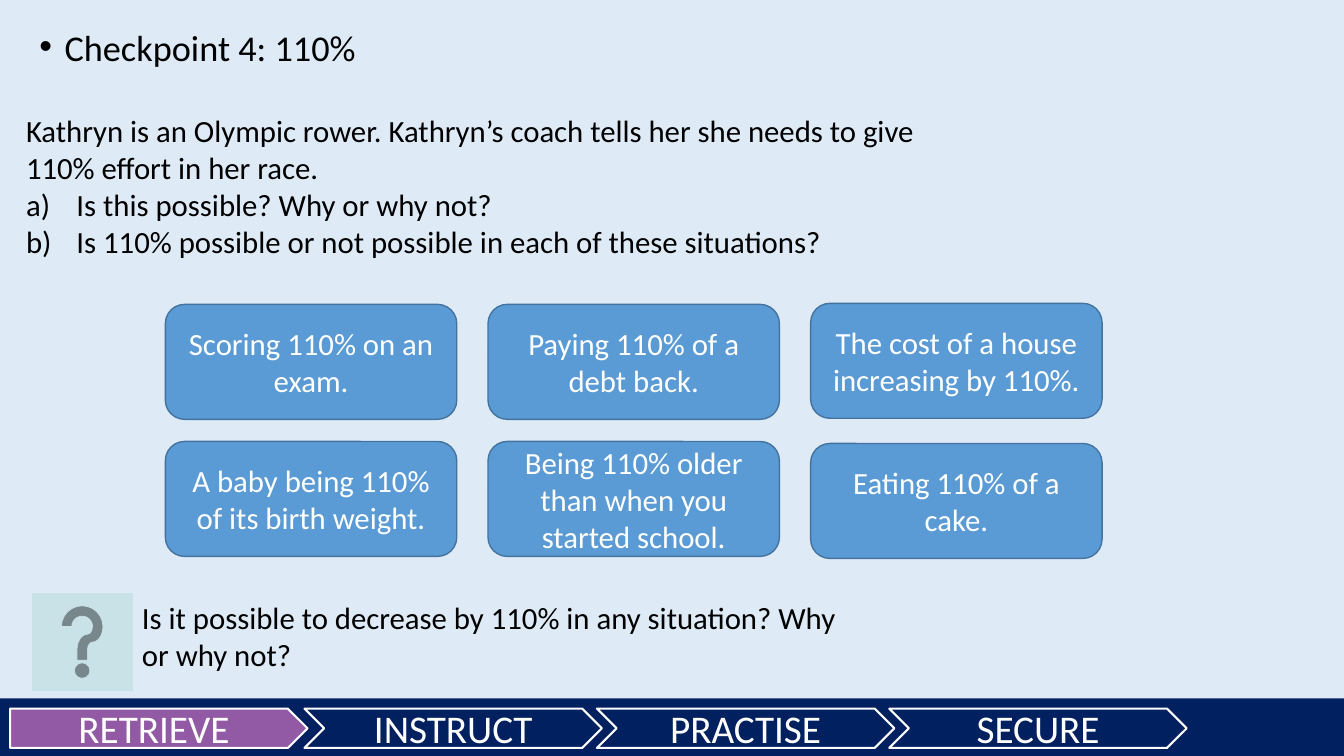
from pptx import Presentation
from pptx import util as u
from pptx.dml.color import RGBColor
from pptx.enum import shapes, text
from pptx.oxml.ns import qn
from lxml import etree

PALE_BLUE = RGBColor(0xDE, 0xEB, 0xF7)
NAVY = RGBColor(0x00, 0x20, 0x60)
PURPLE = RGBColor(0x92, 0x59, 0xA4)
CARD_BLUE = RGBColor(0x5B, 0x9B, 0xD5)
CARD_EDGE = RGBColor(0x43, 0x73, 0x9E)
MINT = RGBColor(0xC8, 0xE2, 0xE8)
WHITE = RGBColor(0xFF, 0xFF, 0xFF)
BLACK = RGBColor(0x00, 0x00, 0x00)

GEO = shapes.MSO_SHAPE
STAGES = ["RETRIEVE", "INSTRUCT", "PRACTISE", "SECURE"]
CARD_LEFTS = [1.64, 4.84, 8.04]
CARDS = [
    [("Scoring 110% on an exam.", 3.02),
     ("Paying 110% of a debt back.", 3.02),
     ("The cost of a house increasing by 110%.", 3.01)],
    [("A baby being 110% of its birth weight.", 4.38),
     ("Being 110% older than when you started school.", 4.38),
     ("Eating 110% of a cake.", 4.4)],
]


class SlideBuilder:
    font = "Calibri"
    size = 22

    def __init__(self, prs):
        self.s = prs.slides.add_slide(prs.slide_layouts[1])
        title = self.s.shapes.title
        title.element.getparent().remove(title.element)
        fill = self.s.background.fill
        fill.solid()
        fill.fore_color.rgb = PALE_BLUE

    def style(self, p, size, color):
        for r in p.runs:
            r.font.name = self.font
            r.font.size = u.Pt(size)
            r.font.color.rgb = color

    def bullet(self, p, indent, tag, **attrs):
        pPr = p._p.get_or_add_pPr()
        pPr.set("marL", str(u.Inches(indent)))
        pPr.set("indent", str(-u.Inches(indent)))
        etree.SubElement(pPr, qn(tag), attrs)

    def heading(self, box, words):
        sp = self.s.placeholders[1]
        sp.left, sp.top, sp.width, sp.height = map(u.Inches, box)
        tf = sp.text_frame
        tf.text = words
        tf.auto_size = text.MSO_AUTO_SIZE.NONE
        p = tf.paragraphs[0]
        self.bullet(p, 0.25, "a:buChar", char="•")
        p.line_spacing = 0.8
        p.space_before = u.Pt(0)
        self.style(p, 25.9, BLACK)

    def textbox(self, box, words, questions=()):
        sp = self.s.shapes.add_textbox(*map(u.Inches, box))
        tf = sp.text_frame
        tf.word_wrap = True
        tf.auto_size = text.MSO_AUTO_SIZE.SHAPE_TO_FIT_TEXT
        tf.text = words
        for question in questions:
            p = tf.add_paragraph()
            p.text = question
            self.bullet(p, 0.5, "a:buAutoNum", type="alphaLcParenR")
        for p in tf.paragraphs:
            self.style(p, self.size, BLACK)

    def shape(self, kind, box, fill, line=None, width=1, words="", size=size):
        sp = self.s.shapes.add_shape(kind, *map(u.Inches, box))
        sp.shadow.inherit = False
        sp.fill.solid()
        sp.fill.fore_color.rgb = fill
        if line is None:
            sp.line.fill.background()
        else:
            sp.line.color.rgb = line
            sp.line.width = u.Pt(width)
        if words:
            tf = sp.text_frame
            tf.word_wrap = True
            tf.vertical_anchor = text.MSO_ANCHOR.MIDDLE
            tf.text = words
            p = tf.paragraphs[0]
            p.alignment = text.PP_ALIGN.CENTER
            self.style(p, size, WHITE)


def main():
    prs = Presentation()
    prs.slide_width = u.Inches(13.33)
    prs.slide_height = u.Inches(7.5)
    s = SlideBuilder(prs)

    s.shape(GEO.RECTANGLE, (0, 6.93, 13.33, 0.57), NAVY)
    for i, stage in enumerate(STAGES):
        kind, left, fill = (
            (GEO.CHEVRON, 0.12 + 2.9 * i, NAVY) if i
            else (GEO.PENTAGON, 0.1, PURPLE))
        s.shape(kind, (left, 7.03, 2.95, 0.39), fill, WHITE, 1.5, stage, 28)

    s.heading((0.29, 0.28, 13.04, 0.47), "Checkpoint 4: 110%")
    s.textbox(
        (0.16, 1.06, 9.19, 1.73),
        "Kathryn is an Olympic rower. Kathryn’s coach tells her she needs "
        "to give 110% effort in her race.",
        ["Is this possible? Why or why not?",
         "Is 110% possible or not possible in each of these situations?"])

    for row in CARDS:
        for left, (words, top) in zip(CARD_LEFTS, row):
            s.shape(GEO.ROUNDED_RECTANGLE, (left, top, 2.89, 1.14),
                    CARD_BLUE, CARD_EDGE, 1, words)

    s.shape(GEO.ACTION_BUTTON_HELP, (0.32, 5.89, 0.99, 0.96), MINT, MINT, 0.5)
    s.textbox(
        (1.31, 5.89, 7.24, 0.84),
        "Is it possible to decrease by 110% in any situation? Why or why not?")

    prs.save("out.pptx")


if __name__ == "__main__":
    main()
